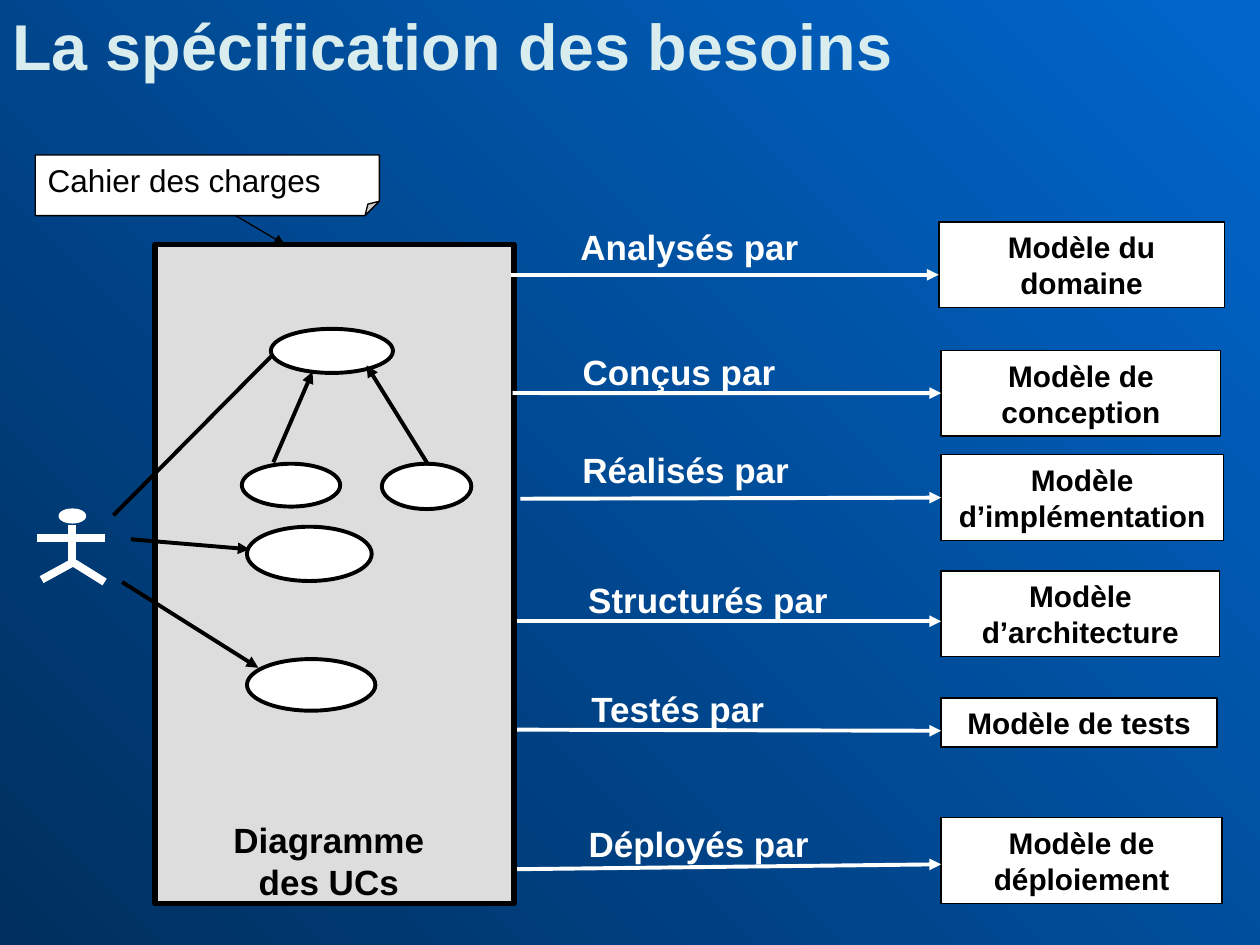
from dataclasses import dataclass

from lxml.etree import SubElement
from pptx import Presentation
from pptx.dml.color import RGBColor
from pptx.enum.shapes import MSO_CONNECTOR as Link, MSO_SHAPE as Kind
from pptx.enum.text import MSO_ANCHOR as Anchor, PP_ALIGN as Align
from pptx.oxml.ns import qn
from pptx.util import Pt

HUES = {"white": "FFFFFF", "black": "000000", "title": "D9EDEF",
        "panel": "DDDDDD", "deep": "002F5E", "sky": "0066CC"}


@dataclass
class Box:
    x: float
    y: float
    w: float
    h: float


@dataclass
class Step:
    label: str
    place: Box
    start: tuple[float, float]
    end: float
    model: str
    box: Box
    edge: float = 0.75


@dataclass
class Line:
    start: tuple[float, float]
    end: tuple[float, float]
    head: bool = True


STEPS = [
    Step("Analysés par", Box(316, 125.3, 156, 31), (292.3, 157), 157,
         "Modèle du domaine", Box(536.4, 126.7, 163.4, 49), 1),
    Step("Conçus par", Box(324, 196.6, 128, 31), (293, 224.6), 224.6,
         "Modèle de conception", Box(537.8, 200.2, 159.8, 49)),
    Step("Réalisés par", Box(307.4, 252.7, 169, 31), (297.4, 285), 285,
         "Modèle d’implémentation", Box(537.8, 259.9, 161.3, 49)),
    Step("Structurés par", Box(322.6, 326.9, 164, 31), (274.3, 355), 355,
         "Modèle d’architecture", Box(537.8, 326.2, 159.1, 49)),
    Step("Testés par", Box(324, 389.5, 126.7, 31), (275.8, 416.9), 417.6,
         "Modèle de tests", Box(537.8, 398.9, 157.7, 28)),
    Step("Déployés par", Box(327.6, 466.6, 143.3, 31), (285.8, 496.8), 493.9,
         "Modèle de déploiement", Box(537.8, 467.3, 160.6, 49)),
]
PANEL = Box(88.6, 139.7, 205.2, 376.6)
CASES = [Box(154.8, 187.9, 69.8, 25.2), Box(138.2, 265, 56.2, 24.5),
         Box(218.2, 265, 51.1, 25.9), Box(141.1, 301, 71.3, 31),
         Box(141.1, 376.6, 73.4, 29.5)]
USES = [Line((156.2, 264.2), (178.6, 212.4)), Line((244.8, 265.7), (209.5, 208.8)),
        Line((64.8, 294.5), (154.8, 203.8), False),
        Line((74.9, 308.2), (142.6, 313.9)), Line((69.8, 332.6), (147.6, 381.6))]
HEAD = Box(33.8, 290.9, 15.1, 7.9)
LIMBS = [Line((41, 300.2), (41, 324), False), Line((20.9, 307.4), (59.8, 307.4), False),
         Line((41, 321.8), (23.8, 331.2), False), Line((42.5, 321.8), (59.8, 332.6), False)]


def tint(name: str) -> RGBColor:
    """Return the named colour."""
    return RGBColor.from_string(HUES[name])


def write(shape, text: str, size: float, hue: str, bold=True, align=Align.CENTER) -> None:
    """Put one run of text into a shape."""
    frame = shape.text_frame
    frame.word_wrap = True
    para = frame.paragraphs[0]
    para.alignment = align
    run = para.add_run()
    run.text = text
    font = run.font
    font.name, font.size, font.bold = "Arial", Pt(size), bold
    font.color.rgb = tint(hue)


def label(shapes, box: Box, text: str, size: float, hue: str, align=Align.CENTER) -> None:
    """Add a bold text box."""
    area = shapes.add_textbox(Pt(box.x), Pt(box.y), Pt(box.w), Pt(box.h))
    write(area, text, size, hue, align=align)


def draw(shapes, kind, box: Box, width: float, fill="white", edge="black"):
    """Add a filled and outlined shape."""
    shape = shapes.add_shape(kind, Pt(box.x), Pt(box.y), Pt(box.w), Pt(box.h))
    shape.shadow.inherit = False
    shape.fill.solid()
    shape.fill.fore_color.rgb = tint(fill)
    shape.line.color.rgb = tint(edge)
    shape.line.width = Pt(width)
    return shape


def fold(shape, size: int) -> None:
    """Set the folded corner's size in thousandths of a percent."""
    guides = next(shape._element.spPr.iter(qn("a:avLst")))
    SubElement(guides, qn("a:gd"), name="adj", fmla=f"val {size}")


def join(shapes, line: Line, hue: str, width=2.25):
    """Add a straight line, with an arrowhead if wanted."""
    link = shapes.add_connector(Link.STRAIGHT, *map(Pt, line.start + line.end))
    link.line.color.rgb = tint(hue)
    link.line.width = Pt(width)
    if line.head:
        SubElement(link.line._get_or_add_ln(), qn("a:tailEnd"), type="triangle")
    SubElement(link._element.spPr, qn("a:effectLst"))
    return link


def show(shapes, step: Step) -> None:
    """Draw a step's label, model box and arrow."""
    box = step.box
    model = draw(shapes, Kind.RECTANGLE, box, step.edge)
    write(model, step.model, 17, "black")
    label(shapes, step.place, step.label, 20, "white")
    link = join(shapes, Line(step.start, (box.x, step.end)), "white")
    if abs(box.y + box.h / 2 - step.end) < 1:
        link.end_connect(model, 1)


def paint(slide) -> None:
    """Give the slide its diagonal gradient."""
    fill = slide.background.fill
    fill.gradient()
    fill.gradient_angle = 45
    for stop, hue, spot in zip(fill.gradient_stops, ("deep", "sky"), (0, 1)):
        stop.color.rgb = tint(hue)
        stop.position = spot


def main() -> None:
    """Build and save the slide."""
    deck = Presentation()
    deck.slide_width, deck.slide_height = Pt(720), Pt(540)
    slide = deck.slides.add_slide(deck.slide_layouts[6])
    shapes = slide.shapes
    paint(slide)
    label(shapes, Box(0, 0, 720, 52), "La spécification des besoins", 37, "title", Align.LEFT)

    join(shapes, Line((105.1, 105.8), (162.7, 139.7)), "black", 0.75)
    inner = [step for step in STEPS if step.start[0] < 290]
    for step in inner:
        show(shapes, step)
    draw(shapes, Kind.RECTANGLE, PANEL, 3, "panel")
    for step in STEPS:
        if step not in inner:
            show(shapes, step)

    note = draw(shapes, Kind.FOLDED_CORNER, Box(20.2, 88.6, 196.6, 34.6), 0.75)
    fold(note, 23700)
    note.text_frame.vertical_anchor = Anchor.TOP
    write(note, "Cahier des charges", 18, "black", False, Align.LEFT)

    for case in CASES:
        draw(shapes, Kind.OVAL, case, 2.25)
    for use in USES:
        join(shapes, use, "black")
    actor = shapes.add_group_shape().shapes
    draw(actor, Kind.OVAL, HEAD, 0.75, edge="white")
    for limb in LIMBS:
        join(actor, limb, "white", 4.5)
    label(shapes, Box(110.9, 464.4, 154.1, 55.4), "Diagramme des UCs", 20, "black")
    deck.save("out.pptx")


if __name__ == "__main__":
    main()
